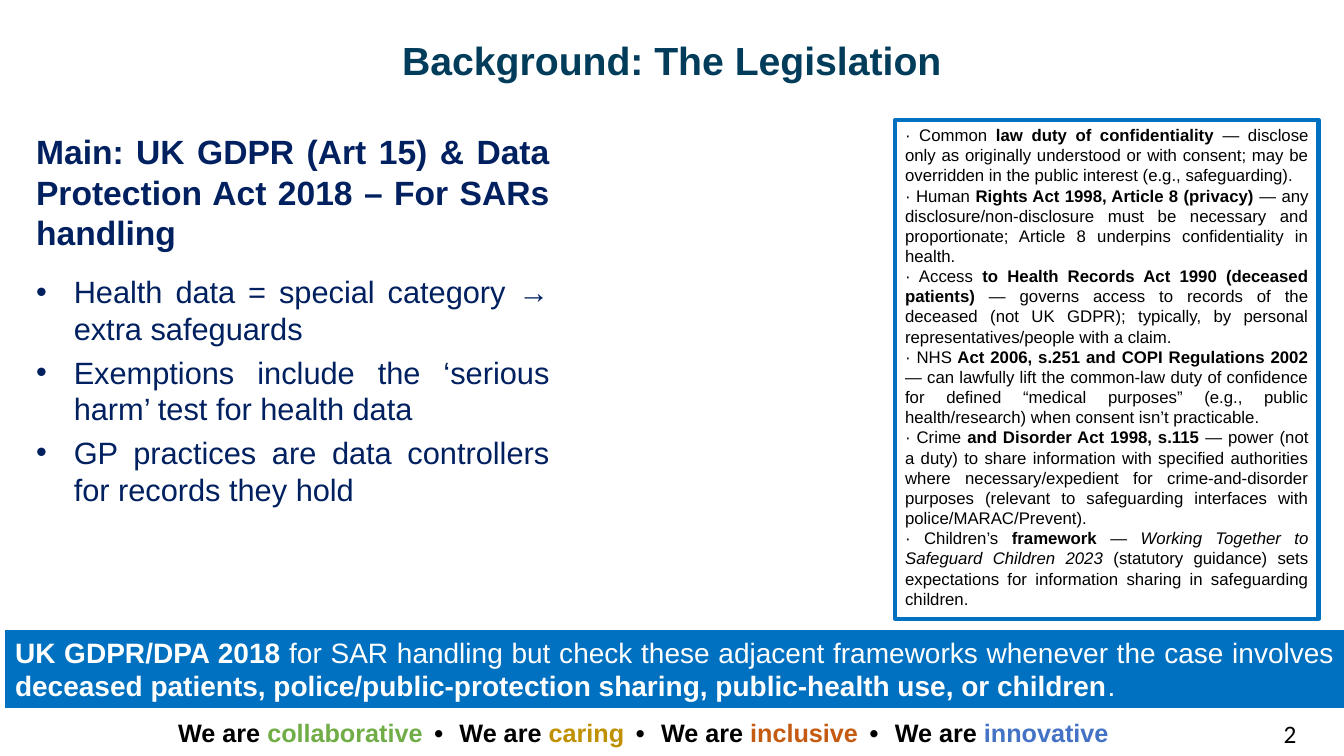
import pptx
import pptx.dml.color
import pptx.enum.shapes
import pptx.enum.text
import pptx.util
from dataclasses import dataclass
from lxml import etree
from pptx.oxml.ns import qn

Cm = pptx.util.Cm
Pt = pptx.util.Pt
Align = pptx.enum.text.PP_ALIGN
Anchor = pptx.enum.text.MSO_ANCHOR


@dataclass(frozen=True)
class Theme:
    font: str = "Arial"
    number_font: str = "Calibri"
    heading: str = "013C5B"
    navy: str = "002060"
    blue: str = "0070C0"
    black: str = "000000"
    white: str = "FFFFFF"
    green: str = "70AD47"
    gold: str = "BF9000"
    rust: str = "C55A11"
    sky: str = "4472C4"
    title_size: int = 28
    lead_size: int = 24
    bullet_size: int = 22
    banner_size: int = 20
    footer_size: int = 18
    panel_size: int = 12


def rgb(colour):
    return pptx.dml.color.RGBColor.from_string(colour)


class SlideBuilder:
    def __init__(self, slide, theme):
        self.slide = slide
        self.theme = theme

    def run(self, paragraph, text, size, colour, style="", font=None):
        """Add a run; style may hold b for bold and i for italic."""
        run = paragraph.add_run()
        run.text = text
        run.font.name = font or self.theme.font
        run.font.size = Pt(size)
        run.font.bold = "b" in style
        run.font.italic = "i" in style
        run.font.color.rgb = rgb(colour)
        return run

    def paragraphs(self, frame, count, align):
        frame.word_wrap = True
        for index in range(count):
            paragraph = frame.paragraphs[0] if index == 0 else frame.add_paragraph()
            paragraph.alignment = align
            yield paragraph

    def title(self, text, left, top, width, height):
        heading = self.slide.shapes.title
        heading.left, heading.top, heading.width, heading.height = map(
            Cm, (left, top, width, height))
        frame = heading.text_frame
        frame.auto_size = pptx.enum.text.MSO_AUTO_SIZE.NONE
        frame.vertical_anchor = Anchor.MIDDLE
        for paragraph in self.paragraphs(frame, 1, Align.CENTER):
            paragraph.line_spacing = 0.9
            self.run(paragraph, text, self.theme.title_size, self.theme.heading, "b")

    def text(self, left, top, width, height, count=1, align=Align.JUSTIFY):
        """Add a text box and return its paragraphs."""
        box = self.slide.shapes.add_textbox(*map(Cm, (left, top, width, height)))
        return list(self.paragraphs(box.text_frame, count, align))

    def bullets(self, items, left, top, width, height):
        paragraphs = self.text(left, top, width, height, len(items))
        for index, (paragraph, item) in enumerate(zip(paragraphs, items)):
            properties = paragraph._p.get_or_add_pPr()
            properties.set("marL", str(Cm(0.95)))
            properties.set("indent", str(-Cm(0.95)))
            etree.SubElement(properties, qn("a:buFont")).set("typeface", self.theme.font)
            etree.SubElement(properties, qn("a:buChar")).set("char", "•")
            if index:
                paragraph.space_before = Pt(0.2 * self.theme.bullet_size)
            self.run(paragraph, item, self.theme.bullet_size, self.theme.navy)

    def rectangle(self, content, left, top, width, height, size, colour,
                  line_width, fill=None):
        """Draw a blue-edged box; content is a list of paragraphs of (text, style)."""
        rectangle = self.slide.shapes.add_shape(
            pptx.enum.shapes.MSO_SHAPE.RECTANGLE, *map(Cm, (left, top, width, height)))
        rectangle.shadow.inherit = False
        if fill:
            rectangle.fill.solid()
            rectangle.fill.fore_color.rgb = rgb(fill)
        else:
            rectangle.fill.background()
        rectangle.line.color.rgb = rgb(self.theme.blue)
        rectangle.line.width = Pt(line_width)
        frame = rectangle.text_frame
        frame.vertical_anchor = Anchor.TOP
        for paragraph, parts in zip(
                self.paragraphs(frame, len(content), Align.JUSTIFY), content):
            for text, style in parts:
                self.run(paragraph, text, size, colour, style)

    def values_footer(self, values, left, top, width, height):
        paragraph, = self.text(left, top, width, height, align=Align.LEFT)
        size, black = self.theme.footer_size, self.theme.black
        for index, (value, colour) in enumerate(values):
            if index:
                separator = self.run(paragraph, " • ", size, black, "b")
                separator._r.get_or_add_rPr().set("spc", "333")
            self.run(paragraph, "We are ", size, black, "b")
            self.run(paragraph, value, size, colour, "b")

    def page_number(self, number, left, top, width, height):
        paragraph, = self.text(left, top, width, height, align=Align.RIGHT)
        self.run(paragraph, number, self.theme.footer_size, self.theme.black,
                 font=self.theme.number_font)


FRAMEWORKS = [
    [("· Common", ""), (" law duty of confidentiality", "b"),
     (" — disclose only as originally understood or with consent; may be overridden "
      "in the public interest (e.g., safeguarding).", "")],
    [("· Human", ""), (" Rights Act 1998, Article 8 (privacy)", "b"),
     (" — any disclosure/non-disclosure must be necessary and proportionate; "
      "Article 8 underpins confidentiality in health.", "")],
    [("· Access", ""), (" to Health Records Act 1990 (deceased patients)", "b"),
     (" — governs access to records of the deceased (not UK GDPR); typically, by "
      "personal representatives/people with a claim.", "")],
    [("· NHS", ""), (" Act 2006, s.251 and COPI Regulations 2002", "b"),
     (" — can lawfully lift the common-law duty of confidence for defined “medical "
      "purposes” (e.g., public health/research) when consent isn’t practicable.", "")],
    [("· Crime", ""), (" and Disorder Act 1998, s.115", "b"),
     (" — power (not a duty) to share information with specified authorities where "
      "necessary/expedient for crime-and-disorder purposes (relevant to safeguarding "
      "interfaces with police/MARAC/Prevent).", "")],
    [("· Children’s", ""), (" framework", "b"), (" — ", ""),
     ("Working Together to Safeguard Children 2023", "i"),
     (" (statutory guidance) sets expectations for information sharing in "
      "safeguarding children.", "")],
]

REMINDER = [[
    ("UK GDPR/DPA 2018", "b"),
    (" for SAR handling but check these adjacent frameworks whenever the case "
     "involves ", ""),
    ("deceased patients, police/public-protection sharing, public-health use, "
     "or children", "b"),
    (".", ""),
]]

SAR_POINTS = [
    "Health data = special category → extra safeguards",
    "Exemptions include the ‘serious harm’ test for health data",
    "GP practices are data controllers for records they hold",
]


def main():
    theme = Theme()
    deck = pptx.Presentation()
    deck.slide_width, deck.slide_height = Cm(33.87), Cm(19.05)
    builder = SlideBuilder(deck.slides.add_slide(deck.slide_layouts[5]), theme)

    builder.values_footer(
        [("collaborative", theme.green), ("caring", theme.gold),
         ("inclusive", theme.rust), ("innovative", theme.sky)],
        4.24, 17.96, 25.4, 1.02)
    builder.page_number("2", 28.22, 17.98, 4.7, 1.02)
    builder.title("Background: The Legislation", 6.48, 0.66, 20.9, 1.83)

    main_law, = builder.text(0.66, 3.18, 13.44, 3.33)
    builder.run(main_law, "Main: UK GDPR (Art 15) & Data Protection Act 2018 – "
                "For SARs handling", theme.lead_size, theme.navy, "b")
    builder.bullets(SAR_POINTS, 0.66, 6.76, 13.44, 7.04)
    builder.rectangle(REMINDER, 0.13, 15.88, 33.76, 1.96, theme.banner_size,
                      theme.white, 0.75, theme.blue)
    builder.rectangle(FRAMEWORKS, 22.56, 3.02, 10.67, 12.57, theme.panel_size,
                      theme.black, 3)
    deck.save("out.pptx")


if __name__ == "__main__":
    main()
